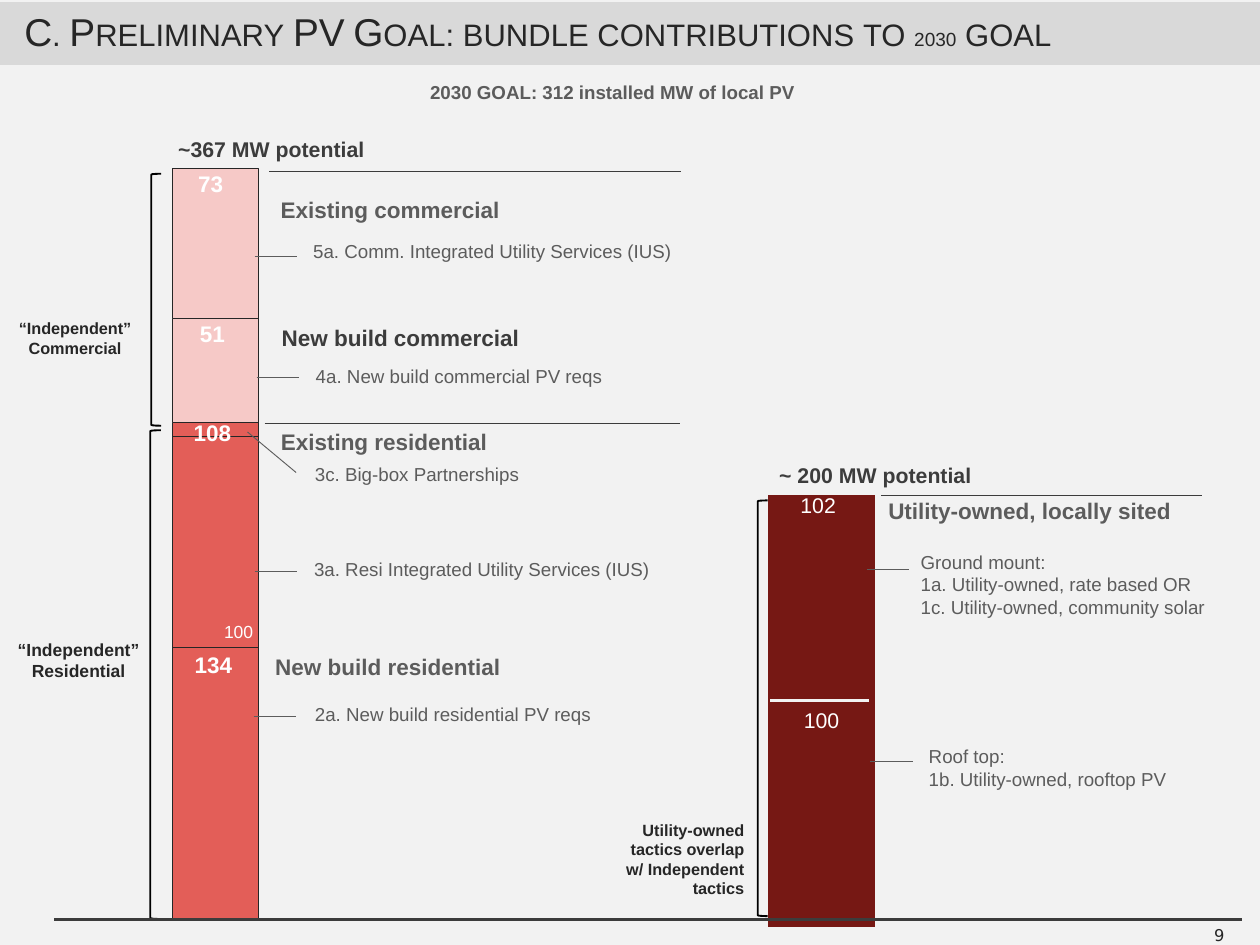
from lxml.etree import SubElement, fromstring
from pptx import Presentation
from pptx.chart.data import CategoryChartData
from pptx.dml.color import RGBColor
from pptx.enum.chart import XL_CHART_TYPE
from pptx.enum.shapes import MSO_CONNECTOR, MSO_SHAPE
from pptx.enum.text import MSO_ANCHOR, PP_ALIGN
from pptx.oxml.ns import qn
from pptx.util import Pt

PAPER = RGBColor(0xF2, 0xF2, 0xF2)
BAND = RGBColor(0xD9, 0xD9, 0xD9)
INK = RGBColor(0x26, 0x26, 0x26)
DARK = RGBColor(0x3C, 0x3C, 0x3C)
GRAY = RGBColor(0x5C, 0x5C, 0x5C)
WHITE = RGBColor(0xFF, 0xFF, 0xFF)
BLACK = RGBColor(0, 0, 0)
RED = RGBColor(0xE3, 0x5E, 0x58)
PINK = RGBColor(0xF6, 0xC9, 0xC7)
MAROON = RGBColor(0x76, 0x18, 0x14)
LEFT, MID, RIGHT = PP_ALIGN.LEFT, PP_ALIGN.CENTER, PP_ALIGN.RIGHT

# Stacked bars: box, plot area (fractions), axis top, outline, (value, colour)
BARS = [
    ((68.4, 60.5, 208, 695.5), (0.087, 0.028, 0.825, 0.944), 300, INK,
     [(100, RED), (77, RED), (5, RED), (38, PINK), (55, PINK)]),
    ((545.8, 42.5, 222.5, 713.5), (0.02, 0.02, 0.96, 0.96), 392, None,
     [(100, MAROON), (98, MAROON)]),
]

TITLE = [("C. Preliminary PV Goal: bundle contributions to ", 31),
         ("2030", 19), (" goal", 31)]

# Text styles: size, colour, bold, alignment
STYLES = {
    "goal": (15, GRAY, True, LEFT),
    "total": (17, DARK, True, MID),
    "head": (18, GRAY, True, LEFT),
    "new": (18, DARK, True, LEFT),
    "item": (15, GRAY, False, LEFT),
    "value": (18, WHITE, True, MID),
    "own": (17, WHITE, False, MID),
    "small": (14, WHITE, False, LEFT),
    "side": (13, INK, True, MID),
    "side big": (14, INK, True, MID),
    "note": (13, INK, True, RIGHT),
    "page": (13, INK, False, LEFT),
}

# Texts: style, left, top, width, height, words
TEXTS = [
    ("goal", 334, 59.8, 566, 29, "2030 GOAL: 312 installed MW of local PV"),
    ("total", 131.8, 104, 170.6, 31, "~367 MW potential"),
    ("total", 610.6, 365, 179.3, 31, "~ 200 MW potential"),
    ("head", 214.6, 152, 199.4, 32, "Existing commercial"),
    ("new", 215.3, 254, 220, 32, "New build commercial"),
    ("head", 214.6, 337, 188.6, 32, "Existing residential"),
    ("head", 210.2, 517.7, 204.5, 32, "New build residential"),
    ("head", 700.6, 393, 256, 32, "Utility-owned, locally sited"),
    ("item", 240.5, 187.2, 327, 29, "5a. Comm. Integrated Utility Services (IUS)"),
    ("item", 242.6, 286.6, 375, 29, "4a. New build commercial PV reqs"),
    ("item", 241.9, 365, 190, 29, "3c. Big-box Partnerships"),
    ("item", 241.2, 441.4, 315, 29, "3a. Resi Integrated Utility Services (IUS)"),
    ("item", 241.9, 557.3, 308, 47.5, "2a. New build residential PV reqs"),
    ("item", 726.5, 435.6, 281, 85,
     "Ground mount:\n1a. Utility-owned, rate based OR\n1c. Utility-owned, community solar"),
    ("item", 733, 591.1, 221, 47.5, "Roof top:\n1b. Utility-owned, rooftop PV"),
    ("value", 126.7, 131, 83.5, 32, "73"),
    ("value", 128.2, 250.6, 83.5, 32, "51"),
    ("value", 128.2, 329.8, 83.5, 32, "108"),
    ("value", 128.9, 516.2, 83.5, 32, "134"),
    ("small", 169.2, 491.8, 46, 27, "100"),
    ("own", 589, 388.8, 131, 30, "102"),
    ("own", 591.8, 560.9, 131, 30, "100"),
    ("side", 0, 249.8, 120, 42.5, "“Independent” Commercial"),
    ("side big", 2.9, 506.2, 120, 44, "“Independent” Residential"),
    ("note", 485.3, 650.9, 120, 75,
     "Utility-owned tactics overlap w/ Independent tactics"),
    ("page", 961.2, 735, 46, 21, "9"),
]

# Brackets: left, top, width, height
BRACKETS = [(121, 139, 8, 201.6), (120.2, 344.2, 8.6, 391),
            (606.2, 400.3, 8, 332.6)]

# Rules: left, right, height on the slide, colour, weight
RULES = [
    (215.3, 545, 136.8, DARK, 0.75),
    (211.7, 543.6, 338.4, DARK, 0.75),
    (704.9, 961.9, 396.7, DARK, 0.75),
    (616.3, 694.8, 560.5, PAPER, 2),
    (43.2, 993.6, 735.8, DARK, 2.25),
]

# Leaders from bar to item: left, top; all but one are level
LEADERS = [(203.8, 204.8), (205.2, 301.7), (203.8, 457.2), (203, 573.1),
           (693.4, 455.8), (696.2, 609.1)]
REACH = 34
SLANT = (198, 345.6, 236.9, 378)


def pts(*nums):
    return [Pt(n) for n in nums]


def add_bar(slide, box, plot, top, edge, parts):
    data = CategoryChartData()
    data.categories = ["1"]
    for n, (value, _) in enumerate(parts, 1):
        data.add_series(f"Series {n}", [value])
    chart = slide.shapes.add_chart(
        XL_CHART_TYPE.COLUMN_STACKED, *pts(*box), data).chart
    chart.has_legend = chart.has_title = False
    chart.font.size, chart.font.name = Pt(10), "DejaVu Sans"
    chart.font.color.rgb = INK
    axis = chart.value_axis
    axis.minimum_scale, axis.maximum_scale = 0, top
    axis.has_major_gridlines = False
    axis.visible = chart.category_axis.visible = False
    bars = chart.plots[0]
    bars.gap_width, bars.overlap = 150, 100
    bars.vary_by_categories = False
    for part, (_, color) in zip(bars.series, parts):
        part.format.fill.solid()
        part.format.fill.fore_color.rgb = color
        if edge is None:
            part.format.line.fill.background()
        else:
            part.format.line.color.rgb = edge
            part.format.line.width = Pt(0.75)
    # Fix the inner plot area
    area = chart.element.find(".//" + qn("c:plotArea"))
    for old in area.findall(qn("c:layout")):
        area.remove(old)
    names = ["layoutTarget", "xMode", "yMode", "x", "y", "w", "h"]
    vals = ["inner", "edge", "edge", *plot]
    tags = "".join(f'<c:{n} val="{v}"/>' for n, v in zip(names, vals))
    area.insert(0, fromstring(
        '<c:layout xmlns:c="http://schemas.openxmlformats.org/drawingml/2006/chart">'
        f"<c:manualLayout>{tags}</c:manualLayout></c:layout>"))


def add_box(slide, left, top, wide, high):
    frame = slide.shapes.add_textbox(*pts(left, top, wide, high)).text_frame
    frame.word_wrap = True
    frame.margin_left = frame.margin_right = Pt(10)
    frame.margin_top = frame.margin_bottom = Pt(5)
    return frame


def set_font(font, size, color, bold=False, name="Arial"):
    font.size, font.name, font.bold = Pt(size), name, bold
    font.color.rgb = color


def add_line(slide, x1, y1, x2, y2, color, weight):
    line = slide.shapes.add_connector(
        MSO_CONNECTOR.STRAIGHT, *pts(x1, y1, x2, y2))
    line.line.color.rgb, line.line.width = color, Pt(weight)
    SubElement(line.element.spPr, qn("a:effectLst"))


def add_shape(slide, kind, box, color, weight):
    shape = slide.shapes.add_shape(kind, *pts(*box))
    shape.shadow.inherit = False
    shape.line.color.rgb, shape.line.width = color, Pt(weight)
    return shape


def main():
    deck = Presentation()
    deck.slide_width, deck.slide_height = pts(1008, 756)
    slide = deck.slides.add_slide(deck.slide_layouts[6])
    slide.background.fill.solid()
    slide.background.fill.fore_color.rgb = PAPER

    for bar in BARS:
        add_bar(slide, *bar)

    # Title band
    band = add_shape(slide, MSO_SHAPE.RECTANGLE, (0, 2, 1008, 50), BAND, 0.75)
    band.fill.solid()
    band.fill.fore_color.rgb = BAND
    frame = add_box(slide, 9.4, 0, 984, 50)
    frame.vertical_anchor = MSO_ANCHOR.MIDDLE
    for words, size in TITLE:
        run = frame.paragraphs[0].add_run()
        run.text = words
        set_font(run.font, size, INK)
        run.font._element.set("cap", "small")

    # Brackets, rules and leaders
    for box in BRACKETS:
        add_shape(slide, MSO_SHAPE.LEFT_BRACKET, box, BLACK, 1.5).fill.background()
    for x1, x2, y, color, weight in RULES:
        add_line(slide, x1, y, x2, y, color, weight)
    for x, y in LEADERS:
        add_line(slide, x, y, x + REACH, y, GRAY, 0.75)
    add_line(slide, *SLANT, GRAY, 0.75)

    # Labels
    for style, *box, words in TEXTS:
        size, color, bold, align = STYLES[style]
        name = "DejaVu Sans" if style == "page" else "Arial"
        frame = add_box(slide, *box)
        frame.text = words
        for para in frame.paragraphs:
            para.alignment = align
            set_font(para.runs[0].font, size, color, bold, name)

    deck.save("out.pptx")


if __name__ == "__main__":
    main()
